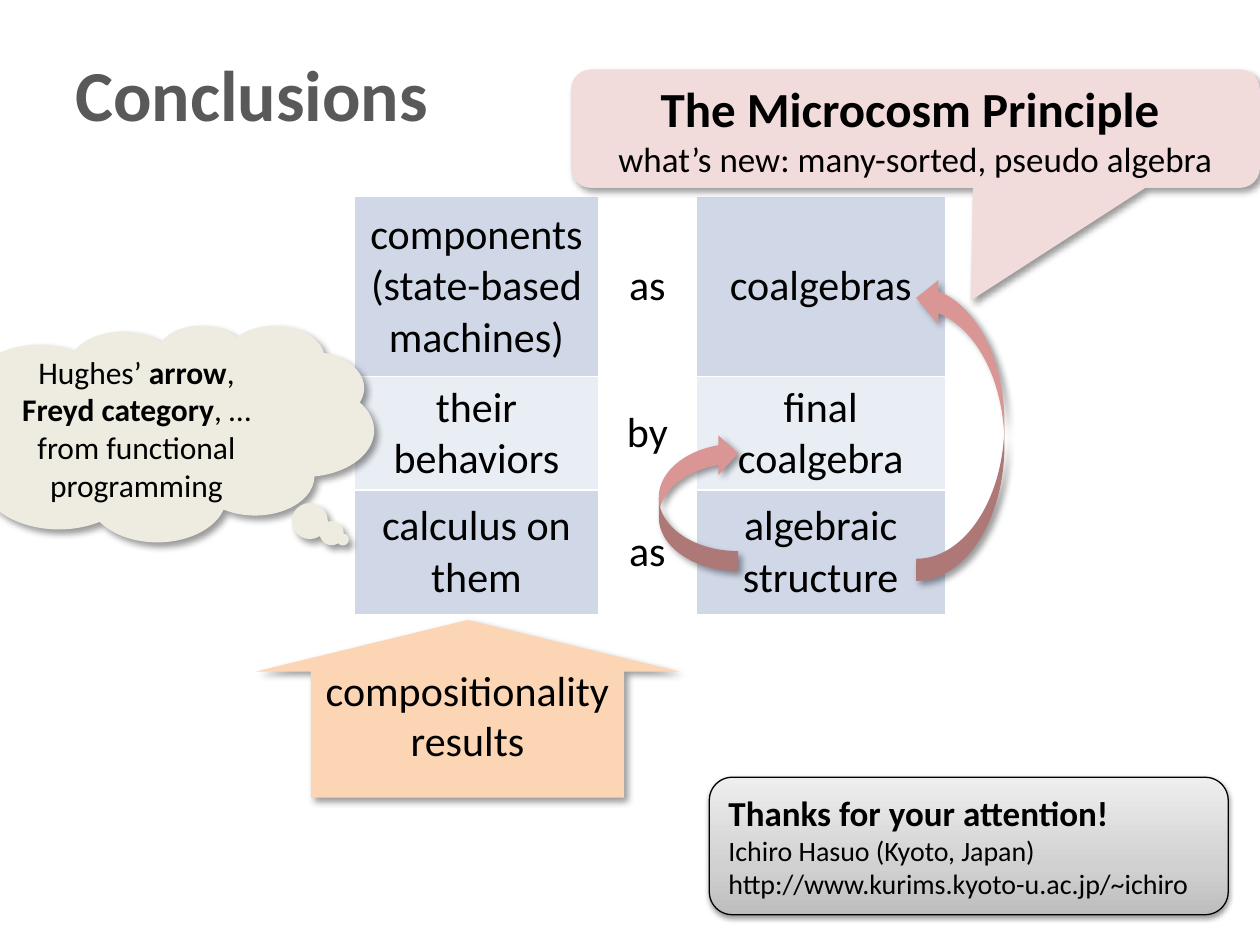
"""Builds the closing slide on coalgebras and the microcosm principle."""
from copy import deepcopy
from dataclasses import dataclass

from lxml import etree
from pptx import Presentation
from pptx import util as u
from pptx.dml.color import RGBColor
from pptx.enum import shapes, text
from pptx.oxml import ns


@dataclass(frozen=True)
class Theme:
    font: str = "Calibri"
    ink: str = "000000"
    heading: str = "595959"
    paper: str = "FFFFFF"
    band_dark: str = "D0D8E8"
    band_light: str = "E9EDF4"
    arrow: str = "D99694"
    callout: str = "F2DCDB"
    result: str = "FCD5B5"
    cloud: str = "EEECE1"
    greys: tuple = ((0, "BDBDBD"), (0.35, "D1D1D1"), (1, "EEEEEE"))
    title: int = 41
    banner: int = 28
    body: int = 24
    lead: int = 20
    note: int = 18
    small: int = 16
    soft_shadow: tuple = (40, 4, 3, 45)
    low_shadow: tuple = (38, 3.1, 1.6, 90)


def add_xml(parent, tag, **attributes):
    return etree.SubElement(parent, ns.qn(tag), {k: str(v) for k, v in attributes.items()})


class SlideBuilder:
    def __init__(self, slide, theme):
        self.slide, self.theme = slide, theme

    def fill_text(self, frame, paragraphs, align=text.PP_ALIGN.CENTER,
                  anchor=text.MSO_ANCHOR.MIDDLE, color=None):
        frame.word_wrap = True
        frame.vertical_anchor = anchor
        for i, (size, *runs) in enumerate(paragraphs):
            paragraph = frame.add_paragraph() if i else frame.paragraphs[0]
            paragraph.alignment = align
            font = paragraph.font
            font.name, font.size = self.theme.font, u.Pt(size)
            font.color.rgb = RGBColor.from_string(color or self.theme.ink)
            weights = {bold for _, bold in runs}
            if len(weights) == 1:
                font.bold = weights.pop()
            for words, bold in runs:
                run = paragraph.add_run()
                run.text = words
                if font.bold is None:
                    run.font.bold = bold

    def title(self, box, words):
        frame = self.slide.shapes.add_textbox(*map(u.Cm, box)).text_frame
        self.fill_text(frame, [(self.theme.title, (words, True))],
                       text.PP_ALIGN.LEFT, color=self.theme.heading)

    def shadow(self, shape, opacity, blur, distance, angle):
        shape.shadow.inherit = False
        effects = shape._element.spPr.find(ns.qn("a:effectLst"))
        outer = add_xml(effects, "a:outerShdw", blurRad=u.Pt(blur), dist=u.Pt(distance),
                        dir=angle * 60000, algn="tl", rotWithShape=0)
        tint = add_xml(outer, "a:srgbClr", val=self.theme.ink)
        add_xml(tint, "a:alpha", val=opacity * 1000)

    def shape(self, kind, box, fill, adjustments=(), shadow=None):
        shape = self.slide.shapes.add_shape(kind, *map(u.Cm, box))
        for i, value in enumerate(adjustments):
            shape.adjustments[i] = value
        if fill:
            shape.fill.solid()
            shape.fill.fore_color.rgb = RGBColor.from_string(fill)
        shape.line.fill.background()
        self.shadow(shape, *(shadow or self.theme.soft_shadow))
        return shape

    def curved_arrow(self, box, mirrored=False):
        arrow = self.shape(shapes.MSO_SHAPE.CURVED_LEFT_ARROW, box, self.theme.arrow)
        arrow.rotation = 180
        if mirrored:
            arrow._element.spPr.xfrm.set("flipH", "1")

    def gradient_panel(self, box, paragraphs):
        panel = self.shape(shapes.MSO_SHAPE.ROUNDED_RECTANGLE, box, None,
                           shadow=self.theme.low_shadow)
        panel.fill.gradient()
        panel.fill.gradient_angle = 90
        stop_list = panel._element.spPr.find(".//" + ns.qn("a:gsLst"))
        stop_list.append(deepcopy(stop_list[0]))
        for stop, (position, color) in zip(panel.fill.gradient_stops, self.theme.greys):
            stop.position = position
            stop.color.rgb = RGBColor.from_string(color)
        panel.line.color.rgb = RGBColor.from_string(self.theme.ink)
        panel.line.width = u.Pt(0.75)
        self.fill_text(panel.text_frame, paragraphs, text.PP_ALIGN.LEFT)

    def borders(self, cell):
        properties = cell._tc.get_or_add_tcPr()
        for i, side in enumerate(("a:lnL", "a:lnR", "a:lnT", "a:lnB")):
            line = etree.Element(ns.qn(side), {"w": str(u.Pt(1))})
            add_xml(add_xml(line, "a:solidFill"), "a:srgbClr", val=self.theme.paper)
            properties.insert(i, line)

    def table(self, box, widths, heights, rows):
        table = self.slide.shapes.add_table(len(rows), len(widths), *map(u.Cm, box)).table
        for column, width in zip(table.columns, widths):
            column.width = u.Cm(width)
        for r, (height, contents) in enumerate(zip(heights, rows)):
            table.rows[r].height = u.Cm(height)
            band = self.theme.band_light if r % 2 else self.theme.band_dark
            for c, words in enumerate(contents):
                cell = table.cell(r, c)
                cell.fill.solid()
                cell.fill.fore_color.rgb = RGBColor.from_string(
                    self.theme.paper if c == 1 else band)
                self.borders(cell)
                self.fill_text(cell.text_frame, [(self.theme.body, (line, False))
                                                 for line in words.split("\n")])
                cell.vertical_anchor = text.MSO_ANCHOR.MIDDLE


def main():
    deck = Presentation()
    deck.slide_width, deck.slide_height = u.Cm(25.4), u.Cm(19.05)
    theme = Theme()
    builder = SlideBuilder(deck.slides.add_slide(deck.slide_layouts[6]), theme)
    kinds = shapes.MSO_SHAPE

    builder.title((1.27, 0.76, 22.86, 2.21), "Conclusions")
    builder.table((7.14, 3.96, 11.92, 8.32), (4.93, 1.96, 5.03), (3.63, 2.18, 2.51), [
        ("components\n(state-based machines)", "as", "coalgebras"),
        ("their behaviors", "by", "final coalgebra"),
        ("calculus on them", "as", "algebraic structure"),
    ])
    builder.curved_arrow((13.28, 8.74, 1.6, 2.77))
    builder.curved_arrow((18.47, 5.56, 1.78, 6.15), mirrored=True)

    principle = builder.shape(kinds.ROUNDED_RECTANGULAR_CALLOUT, (11.51, 1.4, 13.89, 2.39),
                              theme.callout, (0.08, 1.45, 0.17))
    builder.fill_text(principle.text_frame, [
        (theme.banner, ("The Microcosm Principle ", True)),
        (theme.lead, ("what’s new: many-sorted, pseudo algebra", False)),
    ])

    results = builder.shape(kinds.UP_ARROW, (5.16, 12.5, 8.53, 3.58),
                            theme.result, (0.74, 0.29))
    builder.fill_text(results.text_frame, [
        (theme.body, (words, False)) for words in ("compositionality", "results")
    ], anchor=text.MSO_ANCHOR.TOP)

    related = builder.shape(kinds.CLOUD_CALLOUT, (-1.4, 6.55, 8.94, 4.37),
                            theme.cloud, (0.43, 0.49))
    builder.fill_text(related.text_frame, [
        (theme.note, ("Hughes’ ", False), ("arrow", True), (", ", False),
         ("Freyd category", True), (", … from functional programming", False)),
    ])

    builder.gradient_panel((14.3, 15.67, 10.46, 2.77), [
        (theme.lead, ("Thanks for your attention!", True)),
        (theme.small, ("Ichiro Hasuo (Kyoto, Japan)", False)),
        (theme.small, ("http://www.kurims.kyoto-u.ac.jp/~ichiro", False)),
    ])
    deck.save("out.pptx")


if __name__ == "__main__":
    main()
